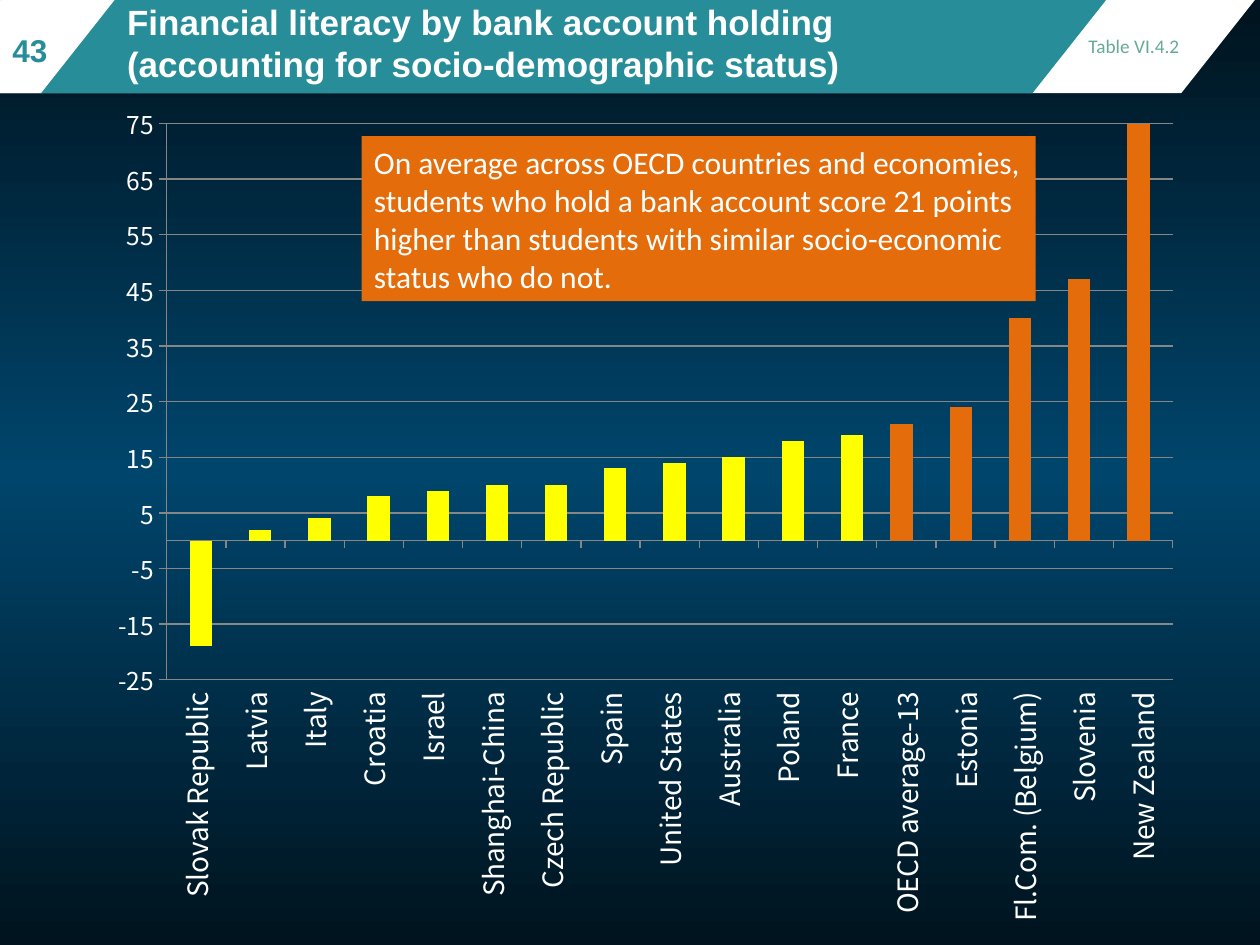
from copy import deepcopy

from lxml import etree
from pptx import Presentation
from pptx.chart.data import CategoryChartData
from pptx.dml.color import RGBColor
from pptx.enum.chart import XL_CHART_TYPE, XL_TICK_LABEL_POSITION, XL_TICK_MARK
from pptx.enum.shapes import MSO_SHAPE
from pptx.enum.text import MSO_ANCHOR, PP_ALIGN
from pptx.oxml.ns import qn
from pptx.util import Pt

COLUMNS = XL_CHART_TYPE.COLUMN_CLUSTERED
LOW = XL_TICK_LABEL_POSITION.LOW
OUTSIDE, NO_TICK = XL_TICK_MARK.OUTSIDE, XL_TICK_MARK.NONE
RECTANGLE, PARALLELOGRAM = MSO_SHAPE.RECTANGLE, MSO_SHAPE.PARALLELOGRAM
TOP, MIDDLE = MSO_ANCHOR.TOP, MSO_ANCHOR.MIDDLE
LEFT = PP_ALIGN.LEFT

WHITE, TEAL, ORANGE, YELLOW = "FFFFFF", "278D99", "E46C0A", "FFFF00"
GREEN, GRAY, NIGHT, OCEAN = "66AA93", "868686", "00131E", "00456C"
CHART_FONT = "Noto Sans CJK KR"
HEADER_HEIGHT = 53.3

SCORES = [
    ("Slovak Republic", -19), ("Latvia", 2), ("Italy", 4), ("Croatia", 8),
    ("Israel", 9), ("Shanghai-China", 10), ("Czech Republic", 10),
    ("Spain", 13), ("United States", 14), ("Australia", 15), ("Poland", 18),
    ("France", 19), ("OECD average-13", 21), ("Estonia", 24),
    ("Fl.Com. (Belgium)", 40), ("Slovenia", 47), ("New Zealand", 76),
]
AVERAGE = 21


def color(value):
    """Turn a hex string into a colour."""
    return RGBColor.from_string(value)


def paint_background(slide, colors):
    """Fill the background with evenly spaced vertical gradient stops."""
    fill = slide.background.fill
    fill.gradient()
    fill.gradient_angle = 270
    stop_list = slide._element.find(".//" + qn("a:gsLst"))
    while len(stop_list) < len(colors):
        stop_list.append(deepcopy(stop_list[0]))
    for index, (stop, value) in enumerate(zip(fill.gradient_stops, colors)):
        stop.color.rgb = color(value)
        stop.position = index / (len(colors) - 1)


def add_block(slide, kind, left, top, width, height, fill):
    """Add a flat preset shape."""
    shape = slide.shapes.add_shape(kind, Pt(left), Pt(top), Pt(width), Pt(height))
    shape.shadow.inherit = False
    shape.fill.solid()
    shape.fill.fore_color.rgb = color(fill)
    shape.line.fill.background()
    return shape


def add_band(slide, left, width, fill):
    """Add a slanted band to the header."""
    band = add_block(slide, PARALLELOGRAM, left, 0, width, HEADER_HEIGHT, fill)
    band.adjustments[0] = 0.79


def write(shape, lines, size, font, text_color, bold=False, anchor=TOP):
    """Write one paragraph per line into a shape."""
    frame = shape.text_frame
    frame.word_wrap = True
    frame.vertical_anchor = anchor
    for index, line in enumerate(lines):
        paragraph = frame.add_paragraph() if index else frame.paragraphs[0]
        paragraph.alignment = LEFT
        run = paragraph.add_run()
        run.text = line
        run.font.size = Pt(size)
        run.font.name = font
        run.font.bold = bold
        run.font.color.rgb = color(text_color)


def add_label(slide, left, top, width, height, text, *style, **options):
    """Add a text box with a single paragraph."""
    box = slide.shapes.add_textbox(Pt(left), Pt(top), Pt(width), Pt(height))
    write(box, [text], *style, **options)


def set_line(line, value):
    """Give a line its colour and a thin width."""
    line.color.rgb = color(value)
    line.width = Pt(0.75)


def style_axis(axis, size, line_color):
    """Set the ticks, labels and line of an axis."""
    axis.major_tick_mark = OUTSIDE
    axis.minor_tick_mark = NO_TICK
    font = axis.tick_labels.font
    font.size = Pt(size)
    font.name = CHART_FONT
    font.color.rgb = color(WHITE)
    set_line(axis.format.line, line_color)


def set_plot_layout(chart, **fractions):
    """Fix the inner plot area as fractions of the chart."""
    plot_area = chart._chartSpace.chart.plotArea
    for old in plot_area.findall(qn("c:layout")):
        plot_area.remove(old)
    layout = etree.Element(qn("c:layout"))
    manual = etree.SubElement(layout, qn("c:manualLayout"))
    settings = {"layoutTarget": "inner", "xMode": "edge", "yMode": "edge", **fractions}
    for name, value in settings.items():
        etree.SubElement(manual, qn("c:" + name)).set("val", str(value))
    plot_area.insert(0, layout)


def add_score_chart(slide):
    """Add the column chart of score differences."""
    data = CategoryChartData()
    data.categories = [name for name, _ in SCORES]
    data.add_series("Series 1", [s if s >= AVERAGE else None for _, s in SCORES])
    data.add_series("Series 2", [s if s < AVERAGE else None for _, s in SCORES])
    chart = slide.shapes.add_chart(
        COLUMNS, Pt(31), Pt(44.6), Pt(663), Pt(605.5), data).chart
    chart.has_legend = False
    chart.has_title = False
    chart.font.size = Pt(18)
    chart.font.name = CHART_FONT
    set_plot_layout(chart, x=0.097, y=0.043, w=0.867, h=0.525)

    plot = chart.plots[0]
    plot.vary_by_categories = False
    plot.gap_width = 123
    plot.overlap = 58
    for series, fill in zip(plot.series, (ORANGE, YELLOW)):
        series.invert_if_negative = False
        series.format.fill.solid()
        series.format.fill.fore_color.rgb = color(fill)

    category_axis, value_axis = chart.category_axis, chart.value_axis
    style_axis(category_axis, 16, GRAY)
    category_axis.tick_label_position = LOW
    body = category_axis._element.find(qn("c:txPr")).find(qn("a:bodyPr"))
    body.set("rot", "-5400000")
    body.set("vert", "horz")
    style_axis(value_axis, 14, GRAY)
    value_axis.minimum_scale, value_axis.maximum_scale = -25, 75
    value_axis.major_unit = 10
    value_axis.has_major_gridlines = True
    set_line(value_axis.major_gridlines.format.line, GRAY)


def main():
    """Build the slide and save it."""
    presentation = Presentation()
    presentation.slide_width, presentation.slide_height = Pt(720), Pt(540)
    slide = presentation.slides.add_slide(presentation.slide_layouts[6])
    paint_background(slide, (NIGHT, OCEAN, NIGHT))

    add_band(slide, -14.4, 731.5, WHITE)
    add_band(slide, -42.5, 674.6, TEAL)
    add_band(slide, -41.8, 107.3, WHITE)
    add_score_chart(slide)
    add_label(slide, 65.5, 0, 516, 49,
              "Financial literacy by bank account holding "
              "(accounting for socio-demographic status)",
              20, "Arial", WHITE, bold=True, anchor=MIDDLE)
    add_label(slide, 614.9, 15.8, 79, 29, "Table VI.4.2", 11, "Calibri", GREEN)
    callout = add_block(slide, RECTANGLE, 206.6, 77.8, 385.2, 94.3, ORANGE)
    write(callout,
          ["On average across OECD countries and economies, students who hold "
           "a bank account score 21 points higher than students with similar "
           "socio-economic", "status who do not."],
          18, "Calibri", WHITE, anchor=MIDDLE)
    add_label(slide, 0, 14.4, 42.5, 29, "43", 18, "Arial", TEAL, bold=True)
    presentation.save("out.pptx")


if __name__ == "__main__":
    main()
